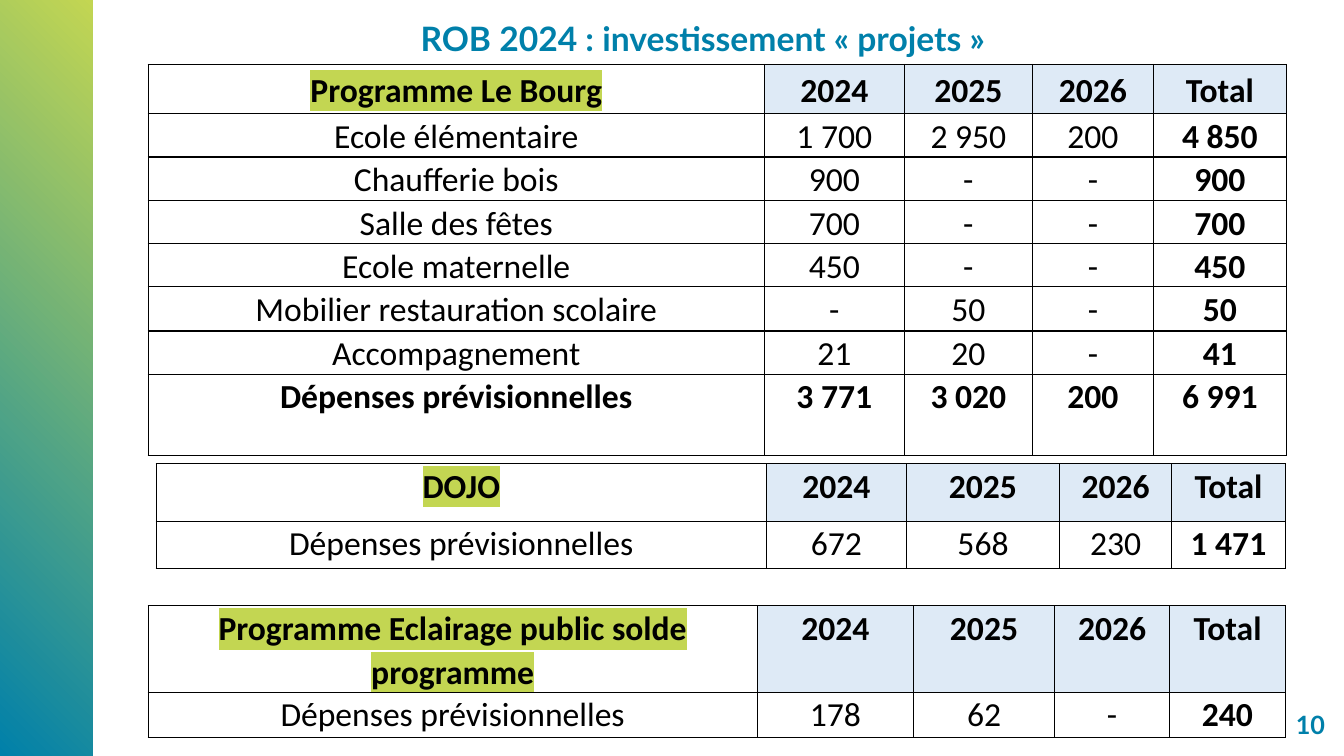
from dataclasses import dataclass

from lxml import etree
from pptx import Presentation
from pptx.dml.color import RGBColor
from pptx.enum import shapes, text
from pptx.oxml import ns
from pptx.util import Inches, Pt

BLUE = RGBColor(0x00, 0x80, 0xAA)
LIME = RGBColor(0xC3, 0xD6, 0x52)
PALE_BLUE = RGBColor(0xDE, 0xEA, 0xF6)
BLACK = RGBColor(0x00, 0x00, 0x00)


@dataclass
class Label:
    wording: str
    left: float
    top: float
    width: float
    size: int
    align: text.PP_ALIGN
    anchor: text.MSO_ANCHOR
    line_spacing: float


@dataclass
class Budget:
    programme: str
    left: float
    top: float
    widths: list[float]
    heights: list[float]
    lines: list[list[str]]
    header_anchor: text.MSO_ANCHOR = text.MSO_ANCHOR.TOP
    bold_last_line: bool = False


YEARS = ["2024", "2025", "2026", "Total"]
EXPENSES = "Dépenses prévisionnelles"

LABELS = [
    Label("10", 9.52, 6.98, 3.72, 18, text.PP_ALIGN.RIGHT, text.MSO_ANCHOR.MIDDLE, 1.0),
    Label("ROB 2024 : investissement «\u00a0projets\u00a0»".replace("\u00a0", " "), 1.22, 0.22, 11.5, 24,
          text.PP_ALIGN.CENTER, text.MSO_ANCHOR.BOTTOM, 0.9),
]

BUDGETS = [
    Budget(
        "Programme Le Bourg", 1.47, 0.64,
        [6.11, 1.39, 1.27, 1.2, 1.32],
        [0.49, 0.39, 0.39, 0.39, 0.39, 0.44, 0.39, 0.81],
        [
            ["Ecole élémentaire", "1 700", "2 950", "200", "4 850"],
            ["Chaufferie bois", "900", "-", "-", "900"],
            ["Salle des fêtes", "700", "-", "-", "700"],
            ["Ecole maternelle", "450", "-", "-", "450"],
            ["Mobilier restauration scolaire", "-", "50", "-", "50"],
            ["Accompagnement", "21", "20", "-", "41"],
            [EXPENSES, "3 771", "3 020", "200", "6 991"],
        ],
        text.MSO_ANCHOR.MIDDLE, True,
    ),
    Budget("DOJO", 1.55, 4.6, [6.05, 1.39, 1.52, 1.11, 1.13], [0.57, 0.47],
           [[EXPENSES, "672", "568", "230", "1 471"]]),
    Budget("Programme Eclairage public solde programme", 1.47, 6.01,
           [6.04, 1.55, 1.4, 1.14, 1.15], [0.58, 0.45],
           [[EXPENSES, "178", "62", "-", "240"]]),
]


def draw_side_band(page) -> None:
    band = page.shapes.add_shape(shapes.MSO_SHAPE.RECTANGLE, 0, 0, Inches(0.92), Inches(7.5))
    band.shadow.inherit = False
    band.line.fill.background()
    band.fill.gradient()
    band.fill.gradient_angle = 45
    for stop, colour in zip(band.fill.gradient_stops, (BLUE, LIME)):
        stop.color.rgb = colour


def draw_label(page, label: Label) -> None:
    box = page.shapes.add_textbox(Inches(label.left), Inches(label.top),
                                  Inches(label.width), Inches(0.41))
    frame = box.text_frame
    frame.word_wrap = True
    frame.vertical_anchor = label.anchor
    frame.text = label.wording
    para = frame.paragraphs[0]
    para.alignment = label.align
    para.line_spacing = label.line_spacing
    font = para.runs[0].font
    font.name, font.size, font.bold = "Lato", Pt(label.size), True
    font.color.rgb = BLUE


def add_borders(cell) -> None:
    properties = cell._tc.get_or_add_tcPr()
    for index, side in enumerate(("lnL", "lnR", "lnT", "lnB")):
        border = etree.Element(ns.qn(f"a:{side}"), w=str(Pt(1)))
        fill = etree.SubElement(border, ns.qn("a:solidFill"))
        etree.SubElement(fill, ns.qn("a:srgbClr"), val=str(BLACK))
        properties.insert(index, border)


def add_highlight(span) -> None:
    highlight = etree.Element(ns.qn("a:highlight"))
    etree.SubElement(highlight, ns.qn("a:srgbClr"), val=str(LIME))
    span.font._element.find(ns.qn("a:solidFill")).addnext(highlight)


def write_cell(cell, wording: str, bold: bool):
    cell.margin_left = cell.margin_right = Inches(0.07)
    cell.margin_top = cell.margin_bottom = 0
    cell.fill.background()
    add_borders(cell)
    cell.text_frame.text = wording
    para = cell.text_frame.paragraphs[0]
    para.alignment = text.PP_ALIGN.CENTER
    para.line_spacing = 1.07
    para.space_after = Pt(8)
    span = para.runs[0]
    span.font.name, span.font.size, span.font.bold = "Calibri", Pt(24), bold
    span.font.color.rgb = BLACK
    return span


def draw_budget(page, budget: Budget) -> None:
    rows = [[budget.programme, *YEARS], *budget.lines]
    table = page.shapes.add_table(
        len(rows), len(budget.widths), Inches(budget.left), Inches(budget.top),
        Inches(sum(budget.widths)), Inches(sum(budget.heights))).table
    table.first_row = table.horz_banding = False
    for column, width in zip(table.columns, budget.widths):
        column.width = Inches(width)
    for row, height in zip(table.rows, budget.heights):
        row.height = Inches(height)
    last_row, last_column = len(rows) - 1, len(budget.widths) - 1
    for r, wordings in enumerate(rows):
        for c, wording in enumerate(wordings):
            cell = table.cell(r, c)
            bold = r == 0 or c == last_column or (budget.bold_last_line and r == last_row)
            span = write_cell(cell, wording, bold)
            if r == 0:
                cell.vertical_anchor = budget.header_anchor
                if c == 0:
                    add_highlight(span)
                else:
                    cell.fill.solid()
                    cell.fill.fore_color.rgb = PALE_BLUE


def main() -> None:
    deck = Presentation()
    deck.slide_width, deck.slide_height = Inches(13.33), Inches(7.5)
    page = deck.slides.add_slide(deck.slide_layouts[6])
    draw_side_band(page)
    for label in LABELS:
        draw_label(page, label)
    for budget in BUDGETS:
        draw_budget(page, budget)
    deck.save("out.pptx")


if __name__ == "__main__":
    main()
